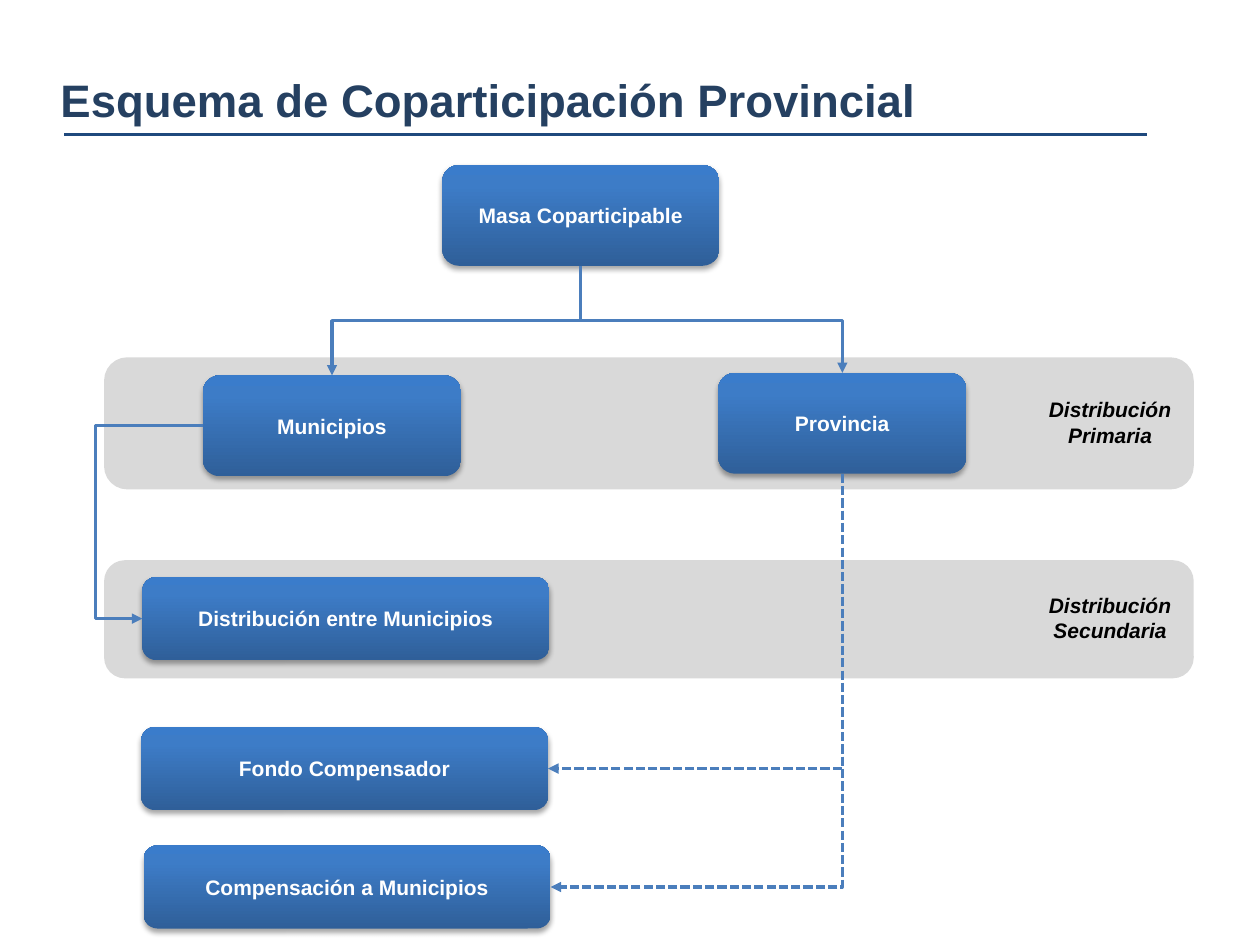
from dataclasses import dataclass
from typing import Optional

import pptx
import pptx.dml.color
import pptx.enum.dml
import pptx.enum.shapes
import pptx.enum.text
import pptx.oxml
import pptx.oxml.ns
import pptx.util

Inches = pptx.util.Inches
Pt = pptx.util.Pt
RGB = pptx.dml.color.RGBColor.from_string
ALIGN = pptx.enum.text.PP_ALIGN
ANCHOR = pptx.enum.text.MSO_ANCHOR
AUTO_SIZE = pptx.enum.text.MSO_AUTO_SIZE
SHAPE = pptx.enum.shapes.MSO_SHAPE
CONNECTOR = pptx.enum.shapes.MSO_CONNECTOR
qn = pptx.oxml.ns.qn
NS = pptx.oxml.ns.nsdecls("a")


@dataclass(frozen=True)
class Theme:
    font: str = "Arial"
    title: str = "254061"
    rule: str = "1F497D"
    band: str = "D9D9D9"
    arrow: str = "4B7EBC"
    box_text: str = "FFFFFF"
    label: str = "000000"
    gradient: tuple = ((0, "2F5F99"), (80, "3D7CC7"), (100, "3A7CCB"))
    title_size: int = 26
    text_size: int = 12
    arrow_width: float = 1.75


@dataclass(frozen=True)
class Box:
    text: str
    x: float
    y: float
    w: float
    h: float
    side_inset: float = 0.04

    @property
    def top(self) -> tuple:
        return self.x + self.w / 2, self.y

    @property
    def bottom(self) -> tuple:
        return self.x + self.w / 2, self.y + self.h

    @property
    def left(self) -> tuple:
        return self.x, self.y + self.h / 2

    @property
    def right(self) -> tuple:
        return self.x + self.w, self.y + self.h / 2


@dataclass(frozen=True)
class Band:
    label: str
    y: float
    h: float
    label_y: float


@dataclass(frozen=True)
class Arrow:
    start: tuple
    end: tuple
    rotation: int
    flip: str = ""
    bend: Optional[float] = None  # None gives a single corner
    dashed: bool = False


THEME = Theme()
MASS = Box("Masa Coparticipable", 3.51, 1.31, 2.2, 0.8, 0.1)
PROVINCE = Box("Provincia", 5.7, 2.96, 1.97, 0.8, 0.1)
TOWNS = Box("Municipios", 1.61, 2.98, 2.05, 0.8)
SHARING = Box("Distribución entre Municipios", 1.13, 4.58, 3.23, 0.66)
FUND = Box("Fondo Compensador", 1.12, 5.77, 3.23, 0.66)
COMPENSATION = Box("Compensación a Municipios", 1.14, 6.71, 3.23, 0.66)
BOXES = (MASS, PROVINCE, TOWNS, SHARING, FUND, COMPENSATION)
BANDS = (
    Band("Distribución Primaria", 2.85, 1.02, 3.1),
    Band("Distribución Secundaria", 4.46, 0.91, 4.65),
)
ARROWS = (
    Arrow(MASS.bottom, TOWNS.top, 90, bend=0.5),
    Arrow(MASS.bottom, PROVINCE.top, 270, "flipH", 0.51),
    Arrow(TOWNS.left, SHARING.left, 180, "flipV", 1.77),
    Arrow(PROVINCE.bottom, FUND.right, 90, dashed=True),
    Arrow(PROVINCE.bottom, COMPENSATION.right, 90, dashed=True),
)


def write(sp, text: str, *, size: float, color: str, italic: bool = False,
          align=ALIGN.CENTER, anchor=ANCHOR.MIDDLE, grow: bool = False,
          side_inset: float = 0.1) -> None:
    tf = sp.text_frame
    tf.word_wrap = True
    tf.auto_size = AUTO_SIZE.SHAPE_TO_FIT_TEXT if grow else AUTO_SIZE.NONE
    tf.vertical_anchor = anchor
    tf.margin_left = tf.margin_right = Inches(side_inset)
    tf.margin_top = tf.margin_bottom = Inches(0.05)
    p = tf.paragraphs[0]
    p.alignment = align
    r = p.add_run()
    r.text = text
    r.font.name, r.font.size = THEME.font, Pt(size)
    r.font.bold, r.font.italic = True, italic
    r.font.color.rgb = RGB(color)


def round_rect(s, x: float, y: float, w: float, h: float):
    sp = s.shapes.add_shape(SHAPE.ROUNDED_RECTANGLE,
                            Inches(x), Inches(y), Inches(w), Inches(h))
    sp.shadow.inherit = False
    return sp


def draw_band(s, band: Band) -> None:
    sp = round_rect(s, 0.84, band.y, 8.62, band.h)
    sp.fill.solid()
    sp.fill.fore_color.rgb = sp.line.color.rgb = RGB(THEME.band)
    sp.line.width = Pt(2)
    label = s.shapes.add_textbox(Inches(8.12), Inches(band.label_y), Inches(1.38), Inches(0.5))
    write(label, band.label, size=THEME.text_size, color=THEME.label, italic=True, grow=True)


def draw_box(s, box: Box) -> None:
    sp = round_rect(s, box.x, box.y, box.w, box.h)
    sp.line.fill.background()
    sp.fill.gradient()
    spPr = sp._element.spPr
    # Three-stop gradient, dark at the bottom
    stops = "".join(f'<a:gs pos="{pos * 1000}"><a:srgbClr val="{color}"/></a:gs>'
                    for pos, color in THEME.gradient)
    spPr.replace(spPr.find(qn("a:gradFill")), pptx.oxml.parse_xml(
        f'<a:gradFill {NS} rotWithShape="1"><a:gsLst>{stops}</a:gsLst>'
        '<a:lin ang="16200000" scaled="0"/></a:gradFill>'))
    # Soft shadow below the box
    spPr.find(qn("a:effectLst")).append(pptx.oxml.parse_xml(
        f'<a:outerShdw {NS} blurRad="{Pt(3.1)}" dist="{Pt(1.8)}" dir="5400000" rotWithShape="0">'
        '<a:srgbClr val="000000"><a:alpha val="35000"/></a:srgbClr></a:outerShdw>'))
    write(sp, box.text, size=THEME.text_size, color=THEME.box_text, side_inset=box.side_inset)


def add_line(s, kind, x1: float, y1: float, x2: float, y2: float, color: str, width: float):
    line = s.shapes.add_connector(kind, Inches(x1), Inches(y1), Inches(x2), Inches(y2))
    line.line.color.rgb = RGB(color)
    line.line.width = Pt(width)
    line._element.spPr.append(pptx.oxml.parse_xml(f"<a:effectLst {NS}/>"))
    return line


def draw_arrow(s, arrow: Arrow) -> None:
    (x1, y1), (x2, y2) = arrow.start, arrow.end
    w, h = abs(x2 - x1), abs(y2 - y1)
    if arrow.rotation in (90, 270):  # the frame is stored before rotation
        w, h = h, w
    left, top = (x1 + x2 - w) / 2, (y1 + y2 - h) / 2
    line = add_line(s, CONNECTOR.ELBOW, left, top, left + w, top + h,
                    THEME.arrow, THEME.arrow_width)
    if arrow.dashed:
        line.line.dash_style = pptx.enum.dml.MSO_LINE.SQUARE_DOT
    spPr = line._element.spPr
    xfrm = spPr.find(qn("a:xfrm"))
    xfrm.set("rot", str(arrow.rotation * 60000))
    if arrow.flip:
        xfrm.set(arrow.flip, "1")
    preset, guide = "bentConnector2", ""
    if arrow.bend is not None:
        preset = "bentConnector3"
        guide = f'<a:gd name="adj1" fmla="val {round(arrow.bend * 100000)}"/>'
    spPr.replace(spPr.find(qn("a:prstGeom")), pptx.oxml.parse_xml(
        f'<a:prstGeom {NS} prst="{preset}"><a:avLst>{guide}</a:avLst></a:prstGeom>'))
    spPr.find(qn("a:ln")).append(pptx.oxml.parse_xml(f'<a:tailEnd {NS} type="triangle"/>'))


def main() -> None:
    prs = pptx.Presentation()
    prs.slide_width, prs.slide_height = Inches(10), Inches(7.5)
    s = prs.slides.add_slide(prs.slide_layouts[5])

    # Title and rule
    title = s.shapes.title
    title.left, title.top = Inches(0.38), Inches(0.52)
    title.width, title.height = Inches(8.82), Inches(0.54)
    write(title, "Esquema de Coparticipación Provincial", size=THEME.title_size,
          color=THEME.title, align=ALIGN.LEFT, anchor=ANCHOR.TOP, grow=True)
    add_line(s, CONNECTOR.STRAIGHT, 0.51, 1.07, 9.1, 1.07, THEME.rule, 1.5)

    # Distribution levels, then the flow across them
    for band in BANDS:
        draw_band(s, band)
    for box in BOXES:
        draw_box(s, box)
    for arrow in ARROWS:
        draw_arrow(s, arrow)

    prs.save("out.pptx")


if __name__ == "__main__":
    main()
